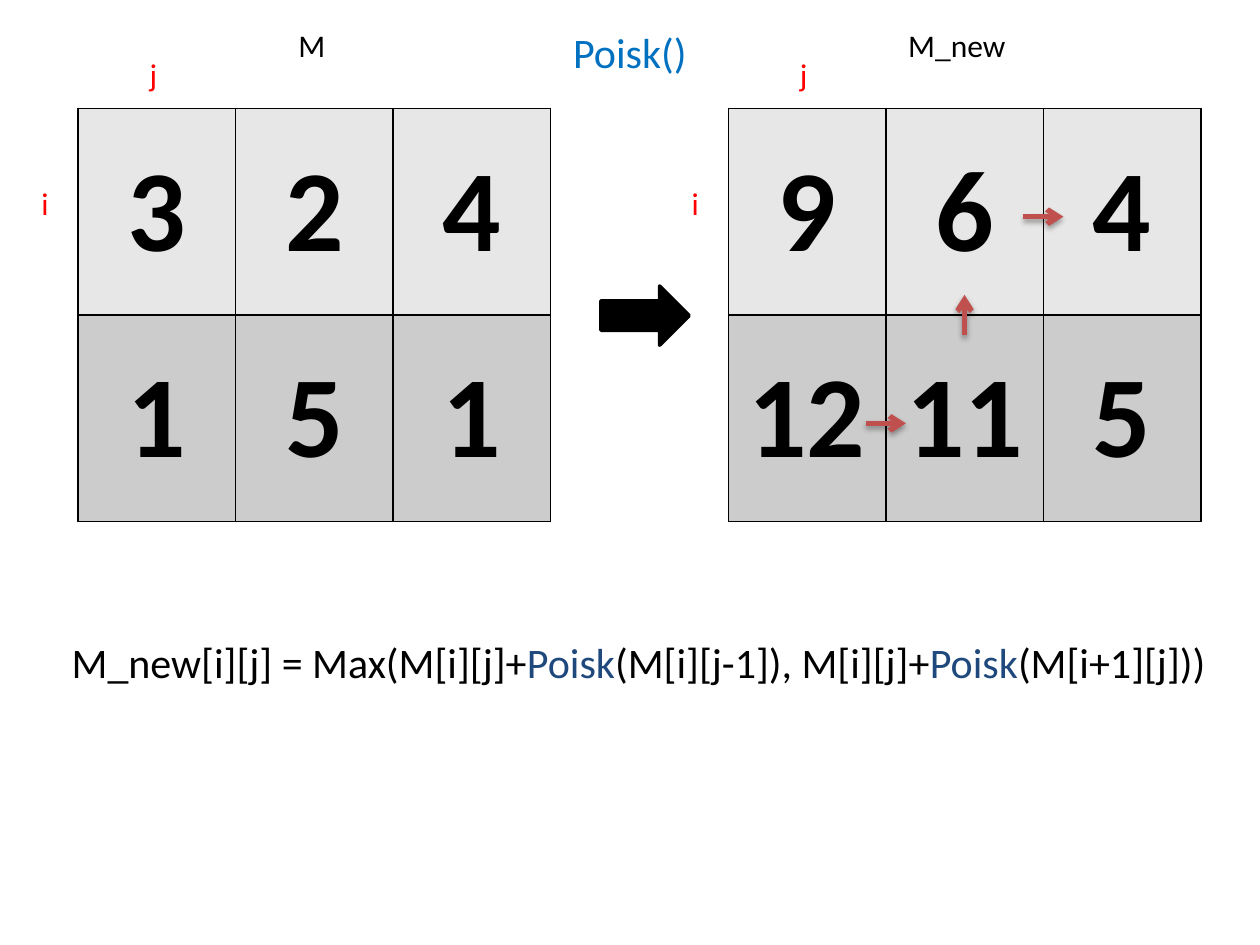
from dataclasses import dataclass

from lxml.etree import SubElement
from pptx import Presentation
from pptx.dml.color import RGBColor
from pptx.enum.shapes import MSO_CONNECTOR as Connector, MSO_SHAPE as Shape
from pptx.enum.text import MSO_ANCHOR as Anchor, MSO_AUTO_SIZE as AutoSize, PP_ALIGN as Align
from pptx.oxml import parse_xml
from pptx.oxml.ns import nsdecls, qn
from pptx.util import Inches, Pt


@dataclass(frozen=True)
class Theme:
    font: str = "Calibri"
    black: str = "000000"
    index: str = "FF0000"
    title: str = "0070C0"
    call: str = "1F497D"
    path_arrow: str = "C0504D"
    rows: tuple = ("E7E7E7", "CCCCCC")
    number_size: int = 66
    formula_size: int = 24
    label_size: int = 18


THEME = Theme()
CELL_W, CELL_H = 1.25, 1.64
MATRIX_TOP = 0.86
M_LEFT, M_NEW_LEFT = 0.62, 5.78
ARROW_HALF = 0.16


def rgb(color):
    return RGBColor.from_string(color)


def style_run(run, size, color, bold=False):
    formats = {"name": THEME.font, "size": Pt(size), "bold": bold}
    for name, value in formats.items():
        setattr(run.font, name, value)
    run.font.color.rgb = rgb(color)


def add_text(slide, box, size, *parts):
    """Add one line of text; each part is a (words, color) pair."""
    frame = slide.shapes.add_textbox(*map(Inches, box)).text_frame
    frame.word_wrap = False
    frame.auto_size = AutoSize.SHAPE_TO_FIT_TEXT
    for words, color in parts:
        run = frame.paragraphs[0].add_run()
        run.text = words
        style_run(run, size, color)


def set_borders(cell):
    properties = cell._tc.get_or_add_tcPr()
    for position, side in enumerate(("lnL", "lnR", "lnT", "lnB")):
        properties.insert(position, parse_xml(
            f'<a:{side} {nsdecls("a")} w="{Pt(1)}"><a:solidFill>'
            f'<a:srgbClr val="{THEME.black}"/></a:solidFill></a:{side}>'))


def add_matrix(slide, left, values):
    rows, columns = len(values), len(values[0])
    table = slide.shapes.add_table(
        rows, columns, Inches(left), Inches(MATRIX_TOP),
        Inches(columns * CELL_W), Inches(rows * CELL_H)).table
    table.first_row = table.horz_banding = False
    for r, (row, fill) in enumerate(zip(values, THEME.rows)):
        for c, value in enumerate(row):
            cell = table.cell(r, c)
            cell.vertical_anchor = Anchor.MIDDLE
            cell.fill.solid()
            cell.fill.fore_color.rgb = rgb(fill)
            set_borders(cell)
            paragraph = cell.text_frame.paragraphs[0]
            paragraph.alignment = Align.CENTER
            run = paragraph.add_run()
            run.text = str(value)
            style_run(run, THEME.number_size, THEME.black, bold=True)


def add_indices(slide, matrix_left):
    for letter, dx, top in (("j", 0.47, 0.39), ("i", -0.39, 1.41)):
        add_text(slide, (matrix_left + dx, top, 0.26, 0.4),
                 THEME.label_size, (letter, THEME.index))


def add_big_arrow(slide):
    arrow = slide.shapes.add_shape(
        Shape.RIGHT_ARROW, *map(Inches, (4.77, 2.27, 0.7, 0.47)))
    arrow.shadow.inherit = False
    arrow.fill.solid()
    arrow.fill.fore_color.rgb = rgb(THEME.black)
    arrow.line.color.rgb = rgb(THEME.black)
    arrow.line.width = Pt(2)


def add_path_arrow(slide, x, y, dx, dy):
    """Add an arrow centred on a cell border, pointing along (dx, dy)."""
    dx, dy = dx * ARROW_HALF, dy * ARROW_HALF
    arrow = slide.shapes.add_connector(
        Connector.STRAIGHT, *map(Inches, (x - dx, y - dy, x + dx, y + dy)))
    arrow.line.color.rgb = rgb(THEME.path_arrow)
    arrow.line.width = Pt(3)
    SubElement(arrow.line._get_or_add_ln(), qn("a:tailEnd"), type="arrow")
    arrow._element.spPr.append(parse_xml(
        f'<a:effectLst {nsdecls("a")}><a:outerShdw blurRad="{Pt(3.1)}" dist="{Pt(1.8)}" '
        f'dir="5400000" rotWithShape="0"><a:srgbClr val="{THEME.black}">'
        '<a:alpha val="35000"/></a:srgbClr></a:outerShdw></a:effectLst>'))


def add_path(slide):
    """Mark the route 12, 11, 6, 4 through the new matrix."""
    upper_y = MATRIX_TOP + CELL_H / 2 + 0.04
    border_x = M_NEW_LEFT + CELL_W
    add_path_arrow(slide, border_x, upper_y + CELL_H, 1, 0)
    add_path_arrow(slide, border_x + CELL_W / 2, MATRIX_TOP + CELL_H, 0, -1)
    add_path_arrow(slide, border_x + CELL_W, upper_y, 1, 0)


def main():
    deck = Presentation()
    deck.slide_width, deck.slide_height = Inches(10), Inches(7.5)
    slide = deck.slides.add_slide(deck.slide_layouts[6])

    add_matrix(slide, M_NEW_LEFT, ((9, 6, 4), (12, 11, 5)))
    add_matrix(slide, M_LEFT, ((3, 2, 4), (1, 5, 1)))
    add_big_arrow(slide)
    add_path(slide)
    for left in (M_LEFT, M_NEW_LEFT):
        add_indices(slide, left)

    add_text(slide, (0.47, 5, 9.29, 0.5), THEME.formula_size,
             ("M_new[i][j] = Max(M[i][j]+", THEME.black), ("Poisk", THEME.call),
             ("(M[i][j-1]), M[i][j]+", THEME.black), ("Poisk", THEME.call),
             ("(M[i+1][j]))", THEME.black))
    add_text(slide, (7.11, 0.16, 0.98, 0.4), THEME.label_size, ("M_new", THEME.black))
    add_text(slide, (2.27, 0.16, 0.42, 0.4), THEME.label_size, ("M", THEME.black))
    add_text(slide, (4.45, 0.16, 1.11, 0.5), THEME.formula_size, ("Poisk()", THEME.title))

    deck.save("out.pptx")


if __name__ == "__main__":
    main()
